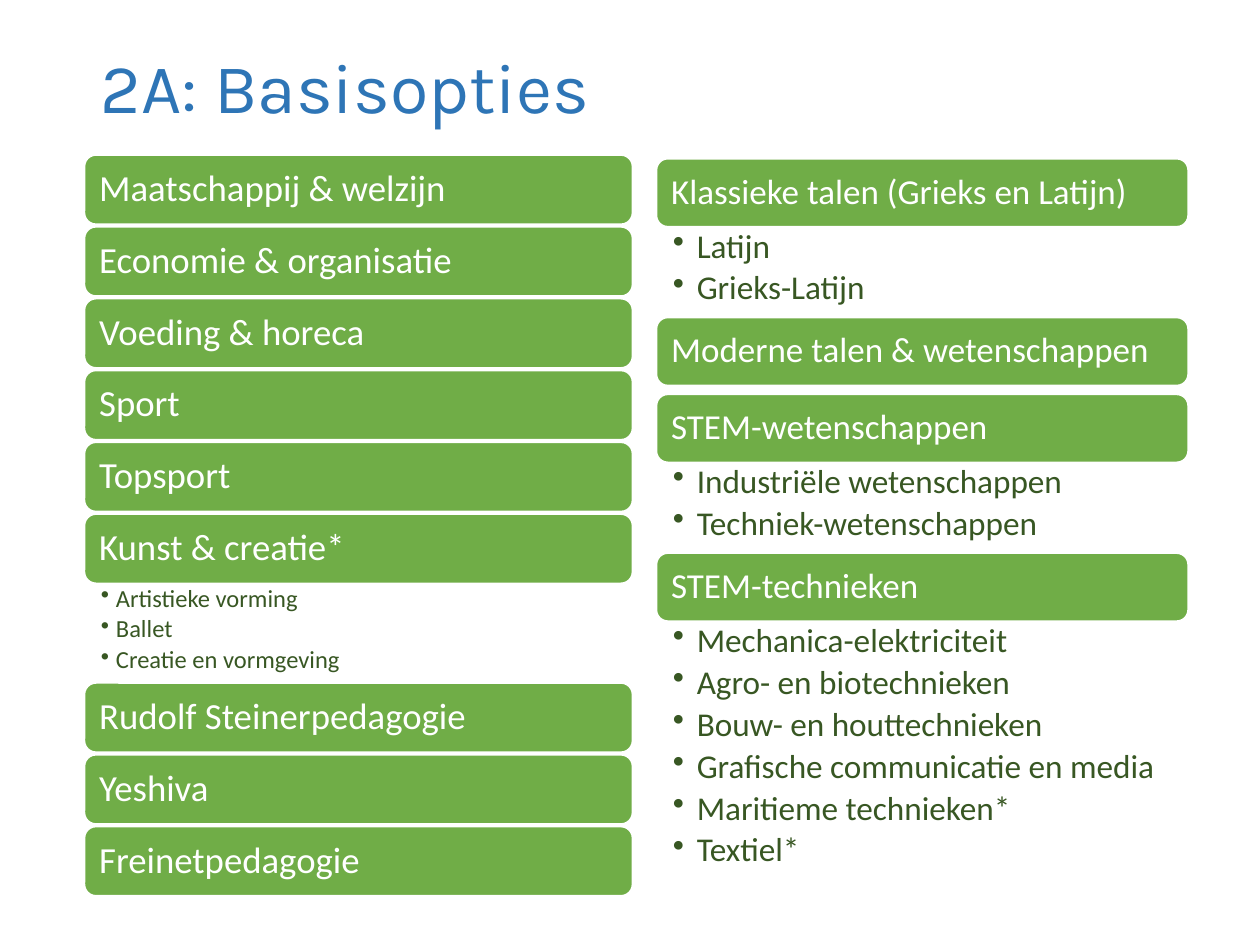
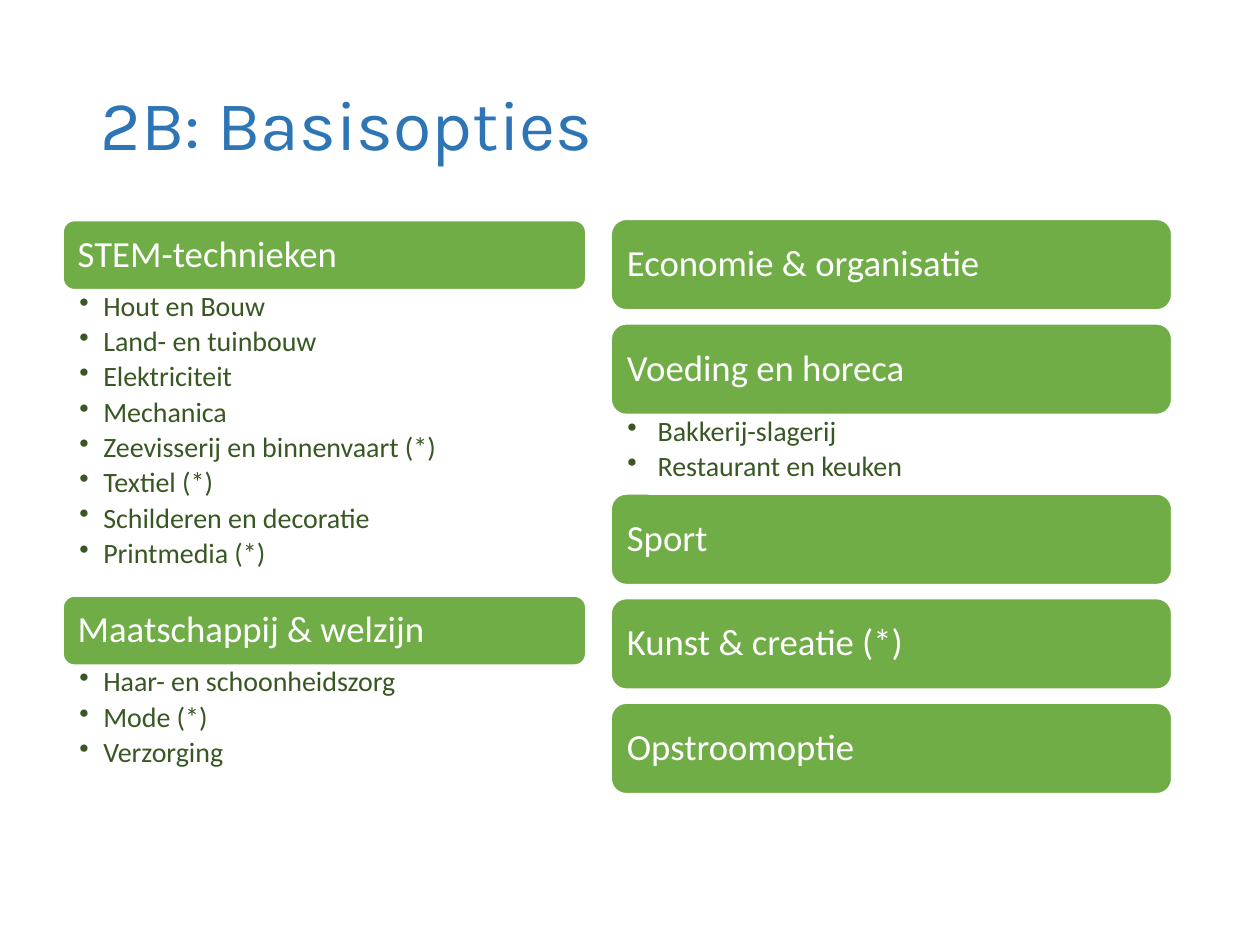
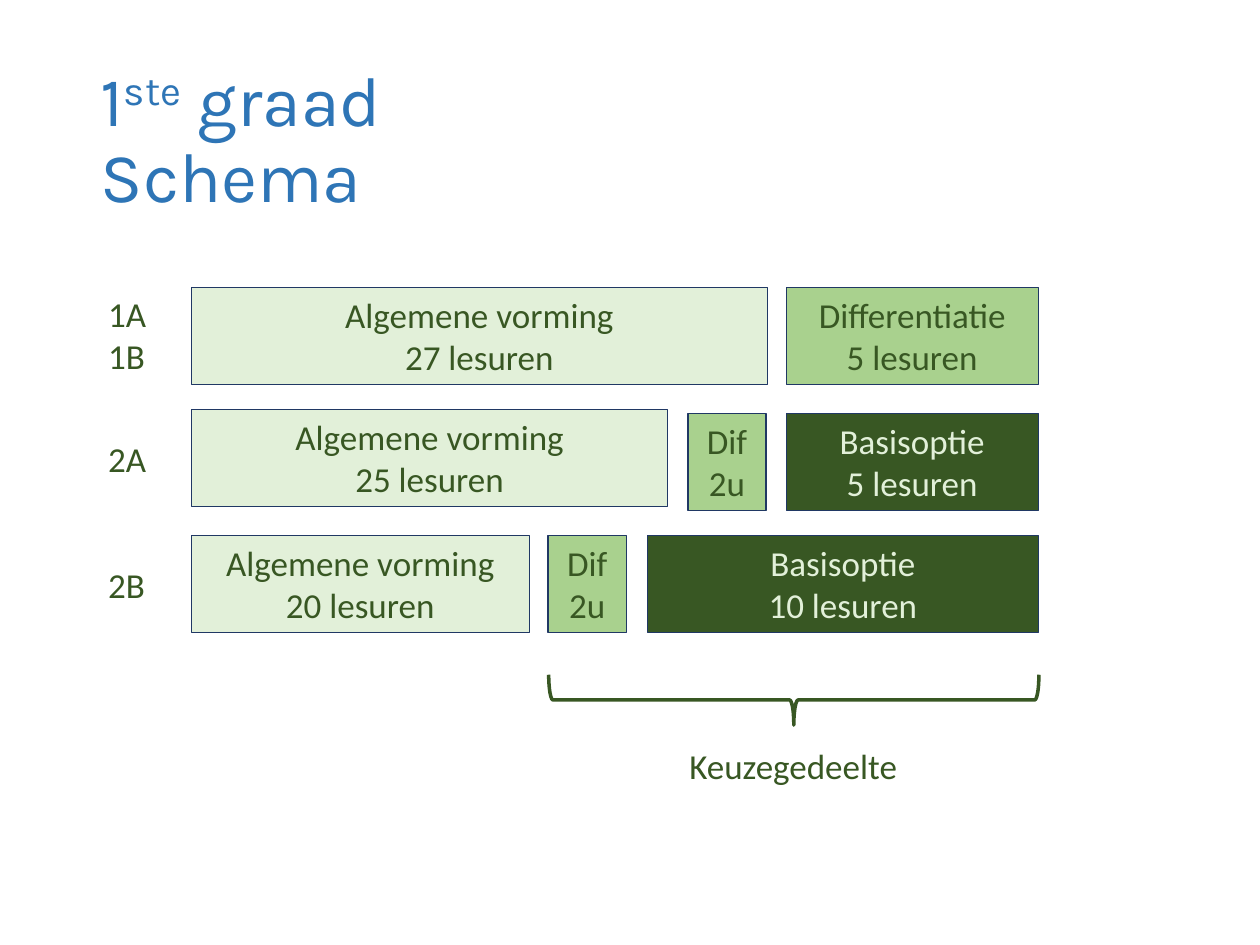
from dataclasses import dataclass

from lxml import etree
from pptx import Presentation
from pptx.dml.color import RGBColor
from pptx.enum.shapes import MSO_SHAPE
from pptx.enum.text import MSO_ANCHOR, MSO_AUTO_SIZE, PP_ALIGN
from pptx.oxml.ns import qn
from pptx.util import Inches, Pt

ROUNDED, RECTANGLE, BRACE = MSO_SHAPE.ROUNDED_RECTANGLE, MSO_SHAPE.RECTANGLE, MSO_SHAPE.LEFT_BRACE
MIDDLE, TOP = MSO_ANCHOR.MIDDLE, MSO_ANCHOR.TOP
LEFT, CENTER = PP_ALIGN.LEFT, PP_ALIGN.CENTER
NO_AUTOFIT = MSO_AUTO_SIZE.NONE


@dataclass(frozen=True)
class Theme:
    blue: RGBColor = RGBColor(0x2E, 0x75, 0xB6)
    navy: RGBColor = RGBColor(0x20, 0x38, 0x64)
    green: RGBColor = RGBColor(0x70, 0xAD, 0x47)
    dark: RGBColor = RGBColor(0x38, 0x57, 0x23)
    medium: RGBColor = RGBColor(0xA9, 0xD1, 0x8E)
    pale: RGBColor = RGBColor(0xE2, 0xF0, 0xD9)
    white: RGBColor = RGBColor(0xFF, 0xFF, 0xFF)
    title_font: str = "Karla"
    body_font: str = "Calibri"
    title_size: int = 40
    scheme_size: int = 20


THEME = Theme()


def add_text(paragraph, text, size, color, font_name=THEME.body_font):
    """Add one run per line of text, with line breaks between; return the last run."""
    for number, line in enumerate(text.split("\n")):
        if number:
            paragraph.add_line_break()
        run = paragraph.add_run()
        run.text = line
        run.font.size = Pt(size)
        run.font.name = font_name
        run.font.color.rgb = color
    return run


def add_titled_slide(presentation, top, height, parts):
    """Add a slide whose title consists of (text, is_superscript) parts."""
    slide = presentation.slides.add_slide(presentation.slide_layouts[5])
    title = slide.shapes.title
    title.left, title.top = Inches(0.7), Inches(top)
    title.width, title.height = Inches(8.62), Inches(height)
    title.text_frame.auto_size = NO_AUTOFIT
    title.text_frame.vertical_anchor = MIDDLE
    paragraph = title.text_frame.paragraphs[0]
    paragraph.alignment = LEFT
    paragraph.line_spacing = 0.9
    for text, is_superscript in parts:
        run = add_text(paragraph, text, THEME.title_size, THEME.blue, THEME.title_font)
        if is_superscript:
            run.font._element.set("baseline", "30000")
    return slide


presentation = Presentation()
presentation.slide_width, presentation.slide_height = Inches(10), Inches(7.5)
title_style = presentation.slide_master.element.find(f".//{qn('p:titleStyle')}/{qn('a:lvl1pPr')}")
title_style.find(qn("a:defRPr")).set("sz", str(THEME.title_size * 100))

# Each row of a column is (heading, height of its list, list items).
option_slides = [
    ("2A: Basisopties", 0.72, [
        dict(left=0.67, top=1.23, width=4.35, bar=0.55, gap=0.02, size=21,
             item_size=14, indent=0.12, rows=[
                 ("Maatschappij & welzijn", 0, []),
                 ("Economie & organisatie", 0, []),
                 ("Voeding & horeca", 0, []),
                 ("Sport", 0, []),
                 ("Topsport", 0, []),
                 ("Kunst & creatie*", 0.79, ["Artistieke vorming", "Ballet", "Creatie en vormgeving"]),
                 ("Rudolf Steinerpedagogie", 0, []),
                 ("Yeshiva", 0, []),
                 ("Freinetpedagogie", 0, []),
             ]),
        dict(left=5.21, top=1.26, width=4.22, bar=0.54, gap=0.07, size=20,
             item_size=19, indent=0.19, rows=[
                 ("Klassieke talen (Grieks en Latijn)", 0.72, ["Latijn", "Grieks-Latijn"]),
                 ("Moderne talen & wetenschappen", 0, []),
                 ("STEM-wetenschappen", 0.72, ["Industriële wetenschappen", "Techniek-wetenschappen"]),
                 ("STEM-technieken", 2.17, [
                     "Mechanica-elektriciteit", "Agro- en biotechnieken", "Bouw- en houttechnieken",
                     "Grafische communicatie en media", "Maritieme technieken*", "Textiel*"]),
             ]),
    ]),
    ("2B: Basisopties", 1.31, [
        dict(left=0.5, top=1.75, width=4.15, bar=0.55, gap=0.02, size=21,
             item_size=16, indent=0.19, rows=[
                 ("STEM-technieken", 2.43, [
                     "Hout en Bouw", "Land- en tuinbouw", "Elektriciteit", "Mechanica",
                     "Zeevisserij en binnenvaart (*)", "Textiel (*)",
                     "Schilderen en decoratie", "Printmedia (*)"]),
                 ("Maatschappij & welzijn", 1.18, ["Haar- en schoonheidszorg", "Mode (*)", "Verzorging"]),
             ]),
        dict(left=4.85, top=1.74, width=4.45, bar=0.72, gap=0.11, size=21,
             item_size=16, indent=0.24, rows=[
                 ("Economie & organisatie", 0, []),
                 ("Voeding en horeca", 0.63, ["Bakkerij-slagerij", "Restaurant en keuken"]),
                 ("Sport", 0, []),
                 ("Kunst & creatie (*)", 0, []),
                 ("Opstroomoptie", 0, []),
             ]),
    ]),
]

for title, title_height, columns in option_slides:
    slide = add_titled_slide(presentation, 0.36, title_height, [(title, False)])
    for column in columns:
        left, width = Inches(column["left"]), Inches(column["width"])
        top = column["top"]
        for heading, list_height, items in column["rows"]:
            bar = slide.shapes.add_shape(ROUNDED, left, Inches(top), width, Inches(column["bar"]))
            bar.shadow.inherit = False
            bar.fill.solid()
            bar.fill.fore_color.rgb = THEME.green
            bar.line.color.rgb = THEME.white
            bar.line.width = Pt(1)
            frame = bar.text_frame
            frame.word_wrap = True
            frame.vertical_anchor = MIDDLE
            frame.margin_left = frame.margin_right = Inches(0.09)
            paragraph = frame.paragraphs[0]
            paragraph.alignment = LEFT
            paragraph.line_spacing = 0.9
            add_text(paragraph, heading, column["size"], THEME.white)
            top += column["bar"]
            if not items:
                top += column["gap"]
                continue

            item_box = slide.shapes.add_textbox(left, Inches(top), width, Inches(list_height))
            frame = item_box.text_frame
            frame.word_wrap = True
            frame.margin_left, frame.margin_right = Inches(0.13), Inches(0.12)
            frame.margin_top = frame.margin_bottom = Inches(0.02)
            for number, item in enumerate(items):
                paragraph = frame.add_paragraph() if number else frame.paragraphs[0]
                properties = paragraph._p.get_or_add_pPr()
                properties.set("marL", str(Inches(column["indent"])))
                properties.set("indent", str(-Inches(column["indent"])))
                etree.SubElement(properties, qn("a:buChar")).set("char", "•")
                paragraph.line_spacing = 0.9
                paragraph.space_after = Pt(0.18 * column["item_size"])
                add_text(paragraph, item, column["item_size"], THEME.dark)
            top += list_height

slide = add_titled_slide(presentation, 0.4, 1.45,
                         [("1", False), ("ste", True), (" graad\nSchema", False)])

block_styles = {
    "general": (THEME.pale, THEME.dark),
    "differentiation": (THEME.medium, THEME.dark),
    "option": (THEME.dark, THEME.pale),
}
row_height = 0.77
blocks = [
    ("general", 1.52, 2.28, 4.57, "Algemene vorming\n27 lesuren"),
    ("differentiation", 6.24, 2.28, 2, "Differentiatie\n5 lesuren"),
    ("general", 1.52, 3.25, 3.78, "Algemene vorming\n25 lesuren"),
    ("differentiation", 5.46, 3.28, 0.62, "Dif\n2u"),
    ("option", 6.24, 3.28, 2, "Basisoptie\n5 lesuren"),
    ("general", 1.52, 4.25, 2.68, "Algemene vorming\n20 lesuren"),
    ("differentiation", 4.35, 4.25, 0.62, "Dif\n2u"),
    ("option", 5.14, 4.25, 3.1, "Basisoptie\n10 lesuren"),
]
for style, left, top, width, text in blocks:
    fill_color, text_color = block_styles[style]
    block = slide.shapes.add_shape(
        RECTANGLE, Inches(left), Inches(top), Inches(width), Inches(row_height))
    block.shadow.inherit = False
    block.fill.solid()
    block.fill.fore_color.rgb = fill_color
    block.line.color.rgb = THEME.navy
    block.line.width = Pt(0.75)
    block.text_frame.word_wrap = True
    block.text_frame.vertical_anchor = TOP
    paragraph = block.text_frame.paragraphs[0]
    paragraph.alignment = CENTER
    add_text(paragraph, text, THEME.scheme_size, text_color)

brace = slide.shapes.add_shape(BRACE, Inches(6.1), Inches(3.61), Inches(0.4), Inches(3.89))
brace.rotation = 270
brace.shadow.inherit = False
brace.fill.background()
brace.line.color.rgb = THEME.dark
brace.line.width = Pt(2)

labels = [
    (0.76, 2.27, 0.61, row_height, LEFT, "1A\n1B"),
    (0.76, 3.42, 0.61, 0.44, LEFT, "2A"),
    (0.76, 4.42, 0.61, 0.44, LEFT, "2B"),
    (4.35, 5.86, 3.89, 0.44, CENTER, "Keuzegedeelte"),
]
for left, top, width, height, alignment, text in labels:
    label = slide.shapes.add_textbox(Inches(left), Inches(top), Inches(width), Inches(height))
    label.text_frame.word_wrap = True
    paragraph = label.text_frame.paragraphs[0]
    paragraph.alignment = alignment
    add_text(paragraph, text, THEME.scheme_size, THEME.dark)

presentation.save("out.pptx")
